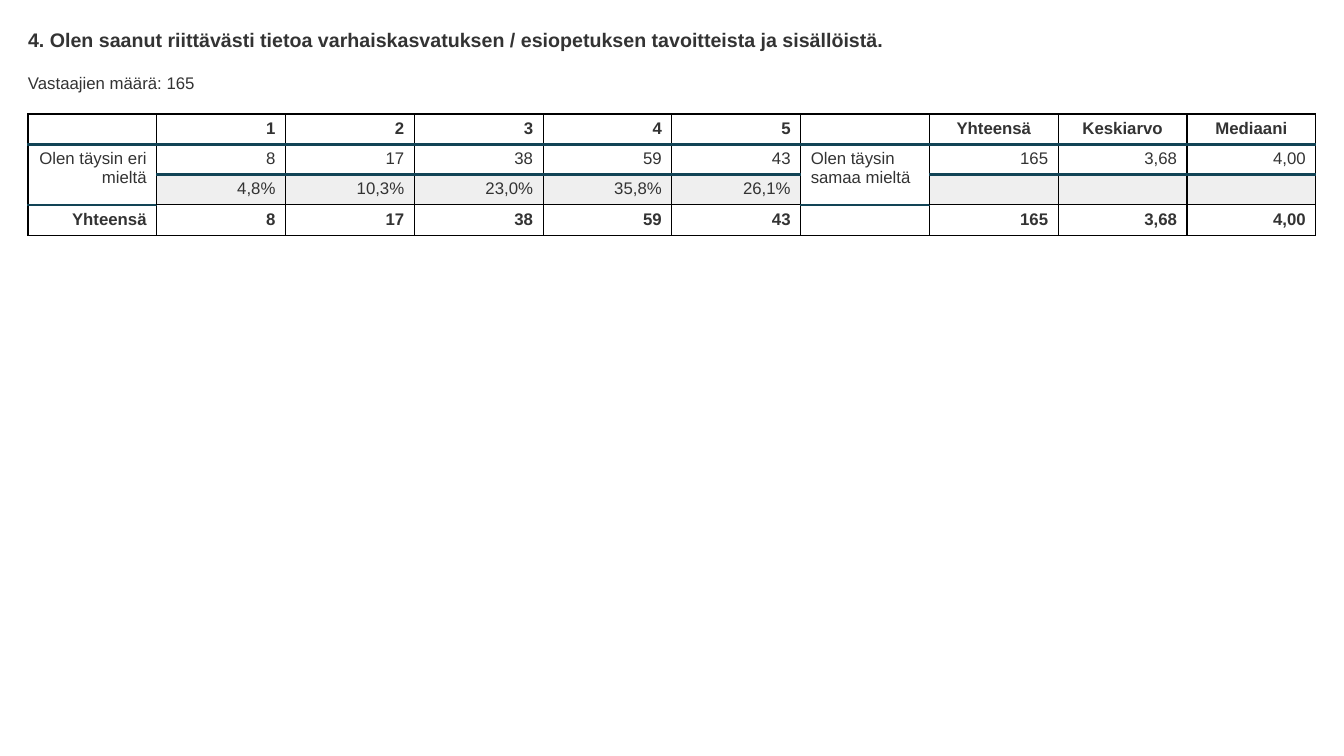
from dataclasses import dataclass

from lxml.etree import SubElement
from pptx import Presentation
from pptx.dml.color import RGBColor
from pptx.enum.text import MSO_ANCHOR, MSO_AUTO_SIZE, PP_ALIGN
from pptx.oxml.ns import qn
from pptx.util import Emu, Pt

EMU_PER_PX = 914400 / 100.8


@dataclass(frozen=True)
class Theme:
    font: str = "Arial"
    text: str = "333333"
    paper: str = "FFFFFF"
    band: str = "EFEFEF"
    grid: str = "000000"
    accent: str = "124456"
    title_size: int = 14
    body_size: int = 12
    grid_width: int = 1
    accent_width: int = 2


@dataclass(frozen=True)
class Box:
    left: int
    top: int
    width: int
    height: int


@dataclass(frozen=True)
class Row:
    texts: tuple
    bold: bool = False
    fill: str = Theme.paper


THEME = Theme()
SLIDE_W, SLIDE_H = 1344, 756
TITLE_BOX = Box(28, 28, 1288, 23)
COUNT_BOX = Box(28, 73, 1288, 20)
TABLE_BOX = Box(28, 114, 1288, 120)
MERGED_COLS = (0, 6)
LEFT_COLS = (6,)
CENTERED_HEADERS = (7, 8, 9)
ROWS = (
    Row(("", "1", "2", "3", "4", "5", "", "Yhteensä", "Keskiarvo", "Mediaani"), bold=True),
    Row(("Olen täysin eri mieltä", "8", "17", "38", "59", "43",
         "Olen täysin samaa mieltä", "165", "3,68", "4,00")),
    Row(("", "4,8%", "10,3%", "23,0%", "35,8%", "26,1%", "", "", "", ""), fill=THEME.band),
    Row(("Yhteensä", "8", "17", "38", "59", "43", "", "165", "3,68", "4,00"), bold=True),
)


def px(n: float) -> Emu:
    return Emu(round(n * EMU_PER_PX))


def write(tf, text: str, size: int, bold: bool, align: PP_ALIGN) -> None:
    p = tf.paragraphs[0]
    p.alignment = align
    if not text:
        # Keeps an empty cell from growing to the default type size.
        SubElement(p._p, qn("a:endParaRPr"), sz=str(size * 100))
        return
    r = p.add_run()
    r.text = text
    for name, value in {"name": THEME.font, "size": Pt(size), "bold": bold}.items():
        setattr(r.font, name, value)
    r.font.color.rgb = RGBColor.from_string(THEME.text)


def format_text_shape(s, box: Box, text: str, size: int, bold: bool = False) -> None:
    for name in ("left", "top", "width", "height"):
        setattr(s, name, px(getattr(box, name)))
    tf = s.text_frame
    frame = {"margin_left": 0, "margin_top": 0, "margin_right": 0, "margin_bottom": 0,
             "word_wrap": True, "vertical_anchor": MSO_ANCHOR.TOP,
             "auto_size": MSO_AUTO_SIZE.SHAPE_TO_FIT_TEXT}
    for name, value in frame.items():
        setattr(tf, name, value)
    write(tf, text, size, bold, PP_ALIGN.LEFT)


def is_accent(edge: int, col: int) -> bool:
    """Tell whether a horizontal edge, counted from the table top, is an accent line."""
    return edge == 1 or edge == (3 if col in MERGED_COLS else 2)


def set_borders(cell, row: int, col: int) -> None:
    pr = cell._tc.get_or_add_tcPr()
    sides = {"lnL": False, "lnR": False,
             "lnT": is_accent(row, col), "lnB": is_accent(row + 1, col)}
    if row == 1 and col in MERGED_COLS:
        sides["lnB"] = True
    for i, (tag, accent) in enumerate(sides.items()):
        color = THEME.accent if accent else THEME.grid
        width = THEME.accent_width if accent else THEME.grid_width
        ln = SubElement(pr, qn(f"a:{tag}"), w=str(Pt(width)))
        SubElement(SubElement(ln, qn("a:solidFill")), qn("a:srgbClr"), val=color)
        pr.insert(i, ln)


def cell_align(row: int, col: int) -> PP_ALIGN:
    if row == 0 and col in CENTERED_HEADERS:
        return PP_ALIGN.CENTER
    return PP_ALIGN.LEFT if col in LEFT_COLS else PP_ALIGN.RIGHT


def add_results(slide, box: Box) -> None:
    cols = len(ROWS[0].texts)
    table = slide.shapes.add_table(len(ROWS), cols, px(box.left), px(box.top),
                                   px(box.width), px(box.height)).table
    table.first_row = table.horz_banding = False
    for col in table.columns:
        col.width = px(box.width / cols)
    for i, row in enumerate(ROWS):
        table.rows[i].height = px(box.height / len(ROWS))
        for j, text in enumerate(row.texts):
            cell = table.cell(i, j)
            cell.fill.solid()
            fill = THEME.paper if j in MERGED_COLS else row.fill
            cell.fill.fore_color.rgb = RGBColor.from_string(fill)
            set_borders(cell, i, j)
            write(cell.text_frame, text, THEME.body_size, row.bold, cell_align(i, j))
    for j in MERGED_COLS:
        table.cell(1, j).merge(table.cell(2, j))


def main() -> None:
    prs = Presentation()
    prs.slide_width, prs.slide_height = px(SLIDE_W), px(SLIDE_H)
    slide = prs.slides.add_slide(prs.slide_layouts[5])
    format_text_shape(
        slide.shapes.title, TITLE_BOX,
        "4. Olen saanut riittävästi tietoa varhaiskasvatuksen / esiopetuksen "
        "tavoitteista ja sisällöistä.", THEME.title_size, bold=True)
    count = slide.shapes.add_textbox(0, 0, 0, 0)
    format_text_shape(count, COUNT_BOX, "Vastaajien määrä: 165", THEME.body_size)
    add_results(slide, TABLE_BOX)
    prs.save("out.pptx")


if __name__ == "__main__":
    main()
